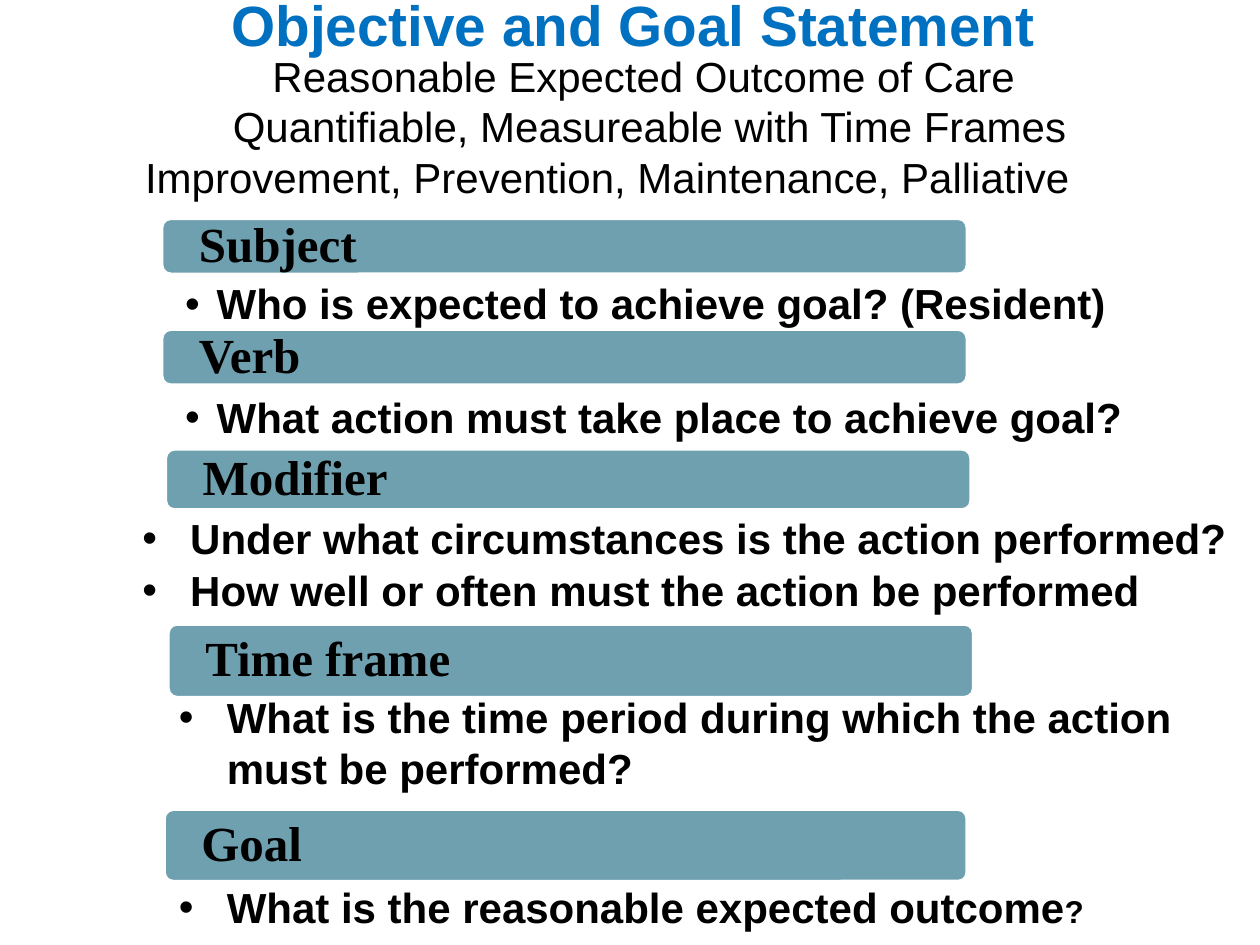
from dataclasses import dataclass

from lxml.etree import SubElement
from pptx import Presentation
from pptx.dml.color import RGBColor
from pptx.enum.shapes import MSO_SHAPE as Shape
from pptx.enum.text import MSO_ANCHOR as Anchor, MSO_AUTO_SIZE as AutoSize, PP_ALIGN as Align
from pptx.oxml.ns import qn
from pptx.util import Inches, Pt

BLUE = RGBColor(0x00, 0x70, 0xC0)
TEAL = RGBColor(0x6E, 0xA0, 0xB0)
WHITE = RGBColor(0xFF, 0xFF, 0xFF)
BLACK = RGBColor(0x00, 0x00, 0x00)
SANS, SERIF = "Arial", "Times New Roman"
WIDTH, HEIGHT = Inches(10), Inches(7.5)
COLS, ROWS = 100, 75
CORNER = 0.65  # bar corner radius, in rows


@dataclass(frozen=True)
class Box:
    """A place on the grid: columns across, rows down."""
    left: float
    top: float
    width: float
    height: float

    def emu(self) -> tuple[int, ...]:
        col, row = WIDTH / COLS, HEIGHT / ROWS
        return (round(self.left * col), round(self.top * row),
                round(self.width * col), round(self.height * row))


@dataclass(frozen=True)
class Section:
    heading: str
    bar: Box
    questions: tuple[str, ...]
    area: Box
    indent: float
    spacing: float
    end_mark: str = ""


SECTIONS = (
    Section("Subject", Box(12.9, 17.4, 63.8, 4.3),
            ("Who is expected to achieve goal? (Resident)",),
            Box(14.7, 22.5, 77, 3.5), 2.5, 0.9),
    Section("Verb", Box(12.9, 26.2, 63.8, 4.3),
            ("What action must take place to achieve goal?",),
            Box(14.7, 31.5, 77, 3.5), 2.5, 0.9),
    Section("Modifier", Box(13.2, 35.7, 63.8, 4.7),
            ("Under what circumstances is the action performed?",
             "How well or often must the action be performed"),
            Box(11.3, 41.1, 88, 8), 3.8, 0.9),
    Section("Time frame", Box(13.4, 49.6, 63.8, 5.7),
            ("What is the time period during which the action must be performed?",),
            Box(14.2, 54.9, 82.3, 8.1), 3.8, 1),
    Section("Goal", Box(13.1, 64.3, 63.6, 5.6),
            ("What is the reasonable expected outcome",),
            Box(14.2, 70, 84.8, 4), 3.8, 1, "?"),
)
SUBTITLE = (
    "Reasonable Expected Outcome of Care ",
    "Quantifiable, Measureable with Time Frames",
    "Improvement, Prevention, Maintenance, Palliative",
)


def set_font(font, name: str, size: float, color: RGBColor, bold: bool = True) -> None:
    font.name, font.size, font.bold = name, Pt(size), bold
    font.color.rgb = color


def set_margins(tf, x: float = 0, y: float = 0) -> None:
    tf.margin_left = tf.margin_right = Inches(x)
    tf.margin_top = tf.margin_bottom = Inches(y)


def add_bullet(p, indent: float) -> None:
    hang = round(indent * WIDTH / COLS)
    pPr = p._p.get_or_add_pPr()
    pPr.set("marL", str(hang))
    pPr.set("indent", str(-hang))
    SubElement(pPr, qn("a:buFont"), typeface=SANS)
    SubElement(pPr, qn("a:buChar"), char="•")


def add_text_area(slide, box: Box, lines: tuple[str, ...]):
    tf = slide.shapes.add_textbox(*box.emu()).text_frame
    tf.word_wrap = True
    set_margins(tf)
    tf.text = "\n".join(lines)
    return tf


def add_title(slide) -> None:
    sp = slide.shapes.title
    sp.left, sp.top, sp.width, sp.height = Box(9, 0, 82.5, 5.6).emu()
    tf = sp.text_frame
    tf.text = "Objective and Goal Statement"
    tf.auto_size = AutoSize.NONE
    tf.vertical_anchor = Anchor.BOTTOM
    set_margins(tf, 0.1, 0.05)
    tf.margin_bottom = Inches(0.1)
    p = tf.paragraphs[0]
    p.alignment = Align.CENTER
    set_font(p.runs[0].font, SANS, 32.4, BLUE)


def add_subtitle(slide) -> None:
    tf = add_text_area(slide, Box(6.55, 4, 90, 12.2), SUBTITLE)
    for p in tf.paragraphs:
        p.alignment = Align.CENTER
        set_font(p.runs[0].font, SANS, 24, BLACK, bold=False)
    # The last line is centred a little further left.
    tf.paragraphs[-1]._p.get_or_add_pPr().set("marR", str(Inches(0.67)))


def add_bar(slide, section: Section) -> None:
    sp = slide.shapes.add_shape(Shape.ROUNDED_RECTANGLE, *section.bar.emu())
    sp.adjustments[0] = CORNER / section.bar.height
    sp.shadow.inherit = False
    sp.fill.solid()
    sp.fill.fore_color.rgb = TEAL
    sp.line.color.rgb = WHITE
    sp.line.width = Pt(1)
    tf = sp.text_frame
    tf.text = section.heading
    tf.vertical_anchor = Anchor.MIDDLE
    set_margins(tf, 0.27, 0.02)
    p = tf.paragraphs[0]
    p.alignment = Align.LEFT
    p.line_spacing = 0.9
    set_font(p.runs[0].font, SERIF, 28, BLACK)


def add_questions(slide, section: Section) -> None:
    tf = add_text_area(slide, section.area, section.questions)
    for i, p in enumerate(tf.paragraphs):
        add_bullet(p, section.indent)
        p.line_spacing = section.spacing
        if i:
            p.space_before = Pt(4)
        set_font(p.runs[0].font, SANS, 24, BLACK)
    if section.end_mark:
        r = tf.paragraphs[-1].add_run()
        r.text = section.end_mark
        set_font(r.font, SANS, 18, BLACK)


def main() -> None:
    prs = Presentation()
    prs.slide_width, prs.slide_height = WIDTH, HEIGHT
    slide = prs.slides.add_slide(prs.slide_layouts[5])
    add_title(slide)
    add_subtitle(slide)
    for section in SECTIONS:
        add_bar(slide, section)
        add_questions(slide, section)
    prs.save("out.pptx")


if __name__ == "__main__":
    main()
